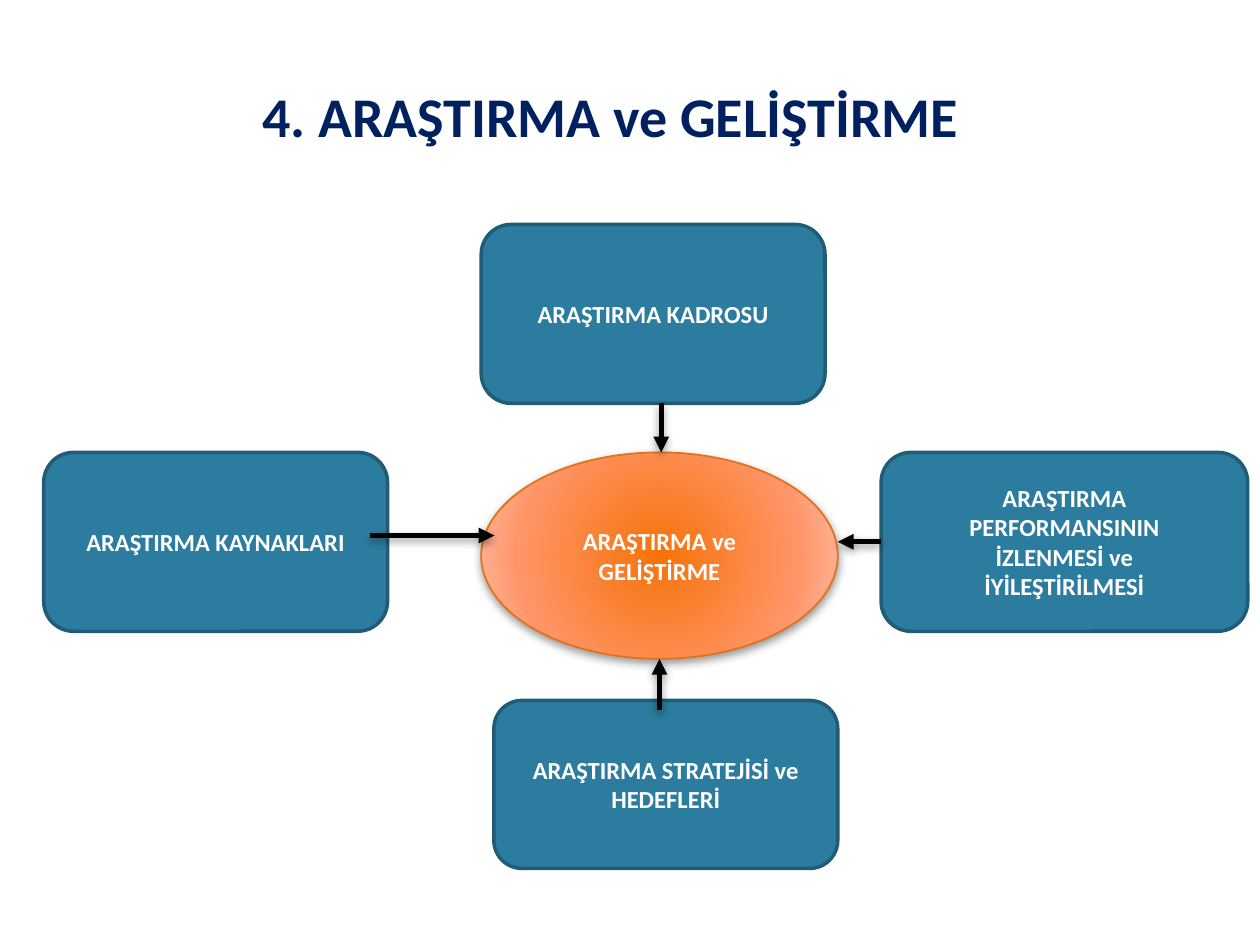
import pptx
import pptx.util
import pptx.dml.color
import pptx.enum.shapes
import pptx.enum.text
import pptx.oxml
import pptx.oxml.ns

Pt = pptx.util.Pt
RGBColor = pptx.dml.color.RGBColor
MSO_SHAPE = pptx.enum.shapes.MSO_SHAPE
MSO_ANCHOR = pptx.enum.text.MSO_ANCHOR
qn = pptx.oxml.ns.qn

NAVY = RGBColor(0x00, 0x20, 0x60)
TEAL = RGBColor(0x2C, 0x7C, 0x9F)
DARK_TEAL = RGBColor(0x21, 0x5C, 0x76)
ORANGE = RGBColor(0xE2, 0x72, 0x18)
WHITE = RGBColor(0xFF, 0xFF, 0xFF)
BLACK = RGBColor(0x00, 0x00, 0x00)
GLOW = [
    (0, RGBColor(0xF6, 0x73, 0x09)),
    (69, RGBColor(0xFF, 0x95, 0x69)),
    (100, RGBColor(0xFE, 0xC3, 0xB0)),
]
FONT = "Calibri"


def add_xml(parent, xml):
    ns = pptx.oxml.ns.nsdecls("a")
    el = pptx.oxml.parse_xml(xml.replace(">", f" {ns}>", 1))
    parent.append(el)
    return el


def add_shadow(s):
    for old in s._element.spPr.findall(qn("a:effectLst")):
        s._element.spPr.remove(old)
    add_xml(
        s._element.spPr,
        '<a:effectLst ><a:outerShdw blurRad="63500" dist="25400" dir="5400000" rotWithShape="0">'
        '<a:srgbClr val="000000"><a:alpha val="40000"/></a:srgbClr>'
        "</a:outerShdw></a:effectLst>",
    )


def radial_fill(s, stops):
    s.fill.gradient()
    spPr = s._element.spPr
    gs = "".join(
        f'<a:gs pos="{pos * 1000}"><a:srgbClr val="{color}"/></a:gs>' for pos, color in stops
    )
    grad = add_xml(
        spPr,
        f'<a:gradFill rotWithShape="1"><a:gsLst>{gs}</a:gsLst><a:path path="circle">'
        '<a:fillToRect l="100000" t="100000" r="100000" b="100000"/></a:path></a:gradFill>',
    )
    spPr.replace(spPr.find(qn("a:gradFill")), grad)


def write_text(s, text, size, color, anchor, inset_x, inset_y):
    tf = s.text_frame
    tf.word_wrap = True
    tf.vertical_anchor = anchor
    tf.margin_left = tf.margin_right = Pt(inset_x)
    tf.margin_top = tf.margin_bottom = Pt(inset_y)
    p = tf.paragraphs[0]
    p.alignment = pptx.enum.text.PP_ALIGN.CENTER
    r = p.add_run()
    r.text = text
    r.font.name = FONT
    r.font.size = Pt(size)
    r.font.bold = True
    r.font.color.rgb = color


def add_title(slide, box, text):
    s = slide.shapes.add_textbox(*map(Pt, box))
    write_text(s, text, 32, NAVY, MSO_ANCHOR.BOTTOM, 7.2, 3.6)


def add_node(slide, kind, box, text, line, width):
    s = slide.shapes.add_shape(kind, *map(Pt, box))
    s.shadow.inherit = False
    s.line.color.rgb = line
    s.line.width = Pt(width)
    write_text(s, text, 14, WHITE, MSO_ANCHOR.MIDDLE, 14.4, 7.2)
    return s


def add_hub(slide, box, text):
    s = add_node(slide, MSO_SHAPE.OVAL, box, text, ORANGE, 1)
    radial_fill(s, GLOW)
    add_shadow(s)


def add_topic(slide, box, text):
    s = add_node(slide, MSO_SHAPE.ROUNDED_RECTANGLE, box, text, DARK_TEAL, 2)
    s.fill.solid()
    s.fill.fore_color.rgb = TEAL
    return s


def add_arrow(slide, start, end):
    s = slide.shapes.add_connector(
        pptx.enum.shapes.MSO_CONNECTOR.STRAIGHT, *map(Pt, start + end)
    )
    s.line.color.rgb = BLACK
    s.line.width = Pt(3)
    add_xml(s.line._get_or_add_ln(), '<a:tailEnd type="triangle" ></a:tailEnd>')
    add_shadow(s)
    return s


def add_diagram(slide, box):
    x, y, w, h = box
    topic_w, topic_h = 196.5, 102.25
    hub_x, hub_y, hub_w, hub_h = x + 250, y + 130.25, 203.75, 118
    hub_right, hub_bottom = hub_x + hub_w, hub_y + hub_h
    mid_x = hub_x + hub_w / 2
    right_w, bottom_h = 209.5, 96
    right_x = x + w - right_w

    add_hub(slide, (hub_x, hub_y, hub_w, hub_h), "ARAŞTIRMA ve GELİŞTİRME")
    add_topic(
        slide,
        (hub_right - topic_w, y + h - bottom_h, topic_w, bottom_h),
        "ARAŞTIRMA STRATEJİSİ ve HEDEFLERİ",
    )
    add_topic(slide, (x, hub_y, topic_w, topic_h), "ARAŞTIRMA KAYNAKLARI")
    add_topic(slide, (hub_x, y, topic_w, topic_h), "ARAŞTIRMA KADROSU")
    right = add_topic(
        slide,
        (right_x, hub_y, right_w, topic_h),
        "ARAŞTIRMA PERFORMANSININ İZLENMESİ ve İYİLEŞTİRİLMESİ",
    )

    left_y, right_y = hub_y + 47.5, hub_y + topic_h / 2
    add_arrow(slide, (x + topic_w - 10, left_y), (hub_x + 7.5, left_y))
    arrow = add_arrow(slide, (right_x, right_y), (hub_right, right_y))
    arrow.begin_connect(right, 1)
    add_arrow(slide, (mid_x + 1, y + topic_h), (mid_x + 1, hub_y))
    add_arrow(slide, (mid_x, hub_bottom + 29.5), (mid_x, hub_bottom))


def main():
    prs = pptx.Presentation()
    prs.slide_width, prs.slide_height = Pt(720), Pt(540)
    slide = prs.slides.add_slide(prs.slide_layouts[6])
    add_title(slide, (25, 0, 648, 88.5), "4. ARAŞTIRMA ve GELİŞTİRME")
    add_diagram(slide, (25, 128.25, 688, 368))
    prs.save("out.pptx")


if __name__ == "__main__":
    main()
